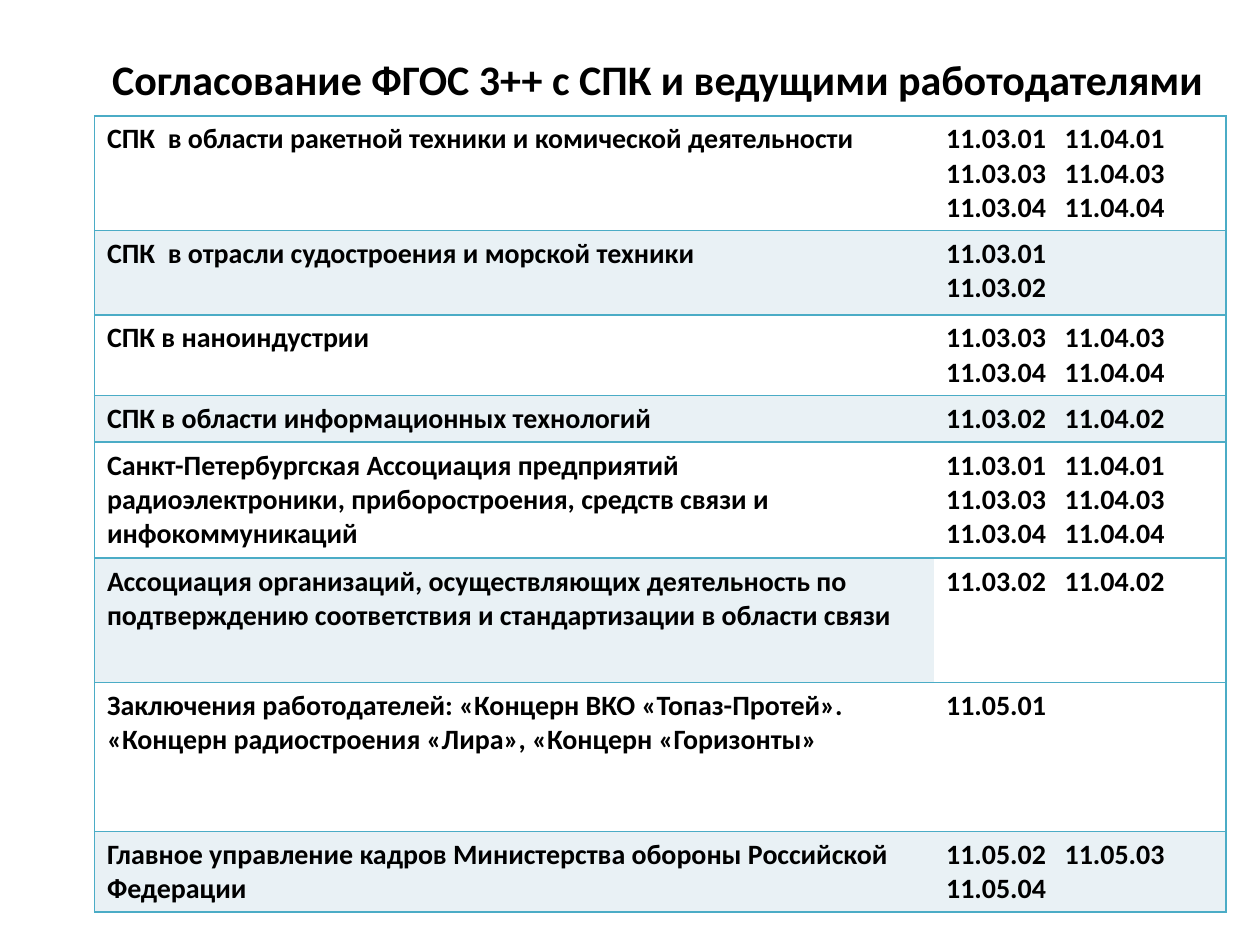
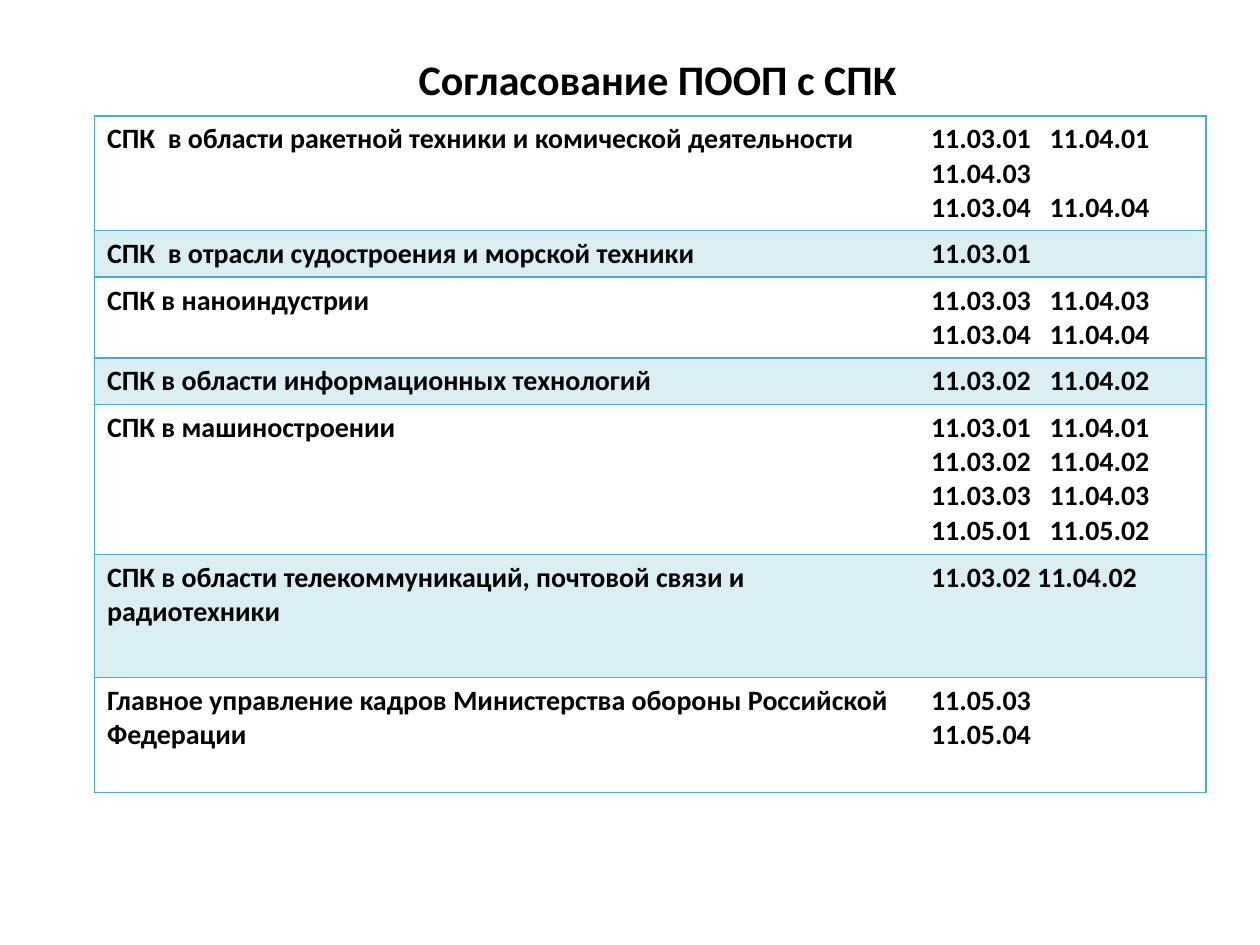
from lxml import etree
from pptx import Presentation
from pptx.dml.color import RGBColor
from pptx.enum.text import MSO_ANCHOR, PP_ALIGN
from pptx.oxml.ns import qn
from pptx.util import Inches, Pt

CENTER = PP_ALIGN.CENTER
MIDDLE = MSO_ANCHOR.MIDDLE

BLACK = RGBColor(0x00, 0x00, 0x00)
WHITE = RGBColor(0xFF, 0xFF, 0xFF)
GREY_BAND = RGBColor(0xE9, 0xF1, 0xF5)
BLUE_BAND = RGBColor(0xDB, 0xEE, 0xF4)
TEAL = RGBColor(0x4B, 0xAC, 0xC6)

FONT = {"name": "Calibri", "bold": True}
TITLE_SIZE, CELL_SIZE = 24, 16
TITLE_BOX = (0.72, 0.35, 9, 0.55)
TABLE_LEFT, TABLE_TOP = 0.75, 0.92
CODE_TAB = 0.94
BORDER_WIDTH = 1

# Each row: height, reviewer, lines of programme codes
ROCKETRY = "СПК  в области ракетной техники и комической деятельности"
SHIPBUILDING = "СПК  в отрасли судостроения и морской техники"
NANO_ROW = (0.64, "СПК в наноиндустрии",
            ["11.03.03\t11.04.03", "11.03.04\t11.04.04"])
IT_ROW = (0.37, "СПК в области информационных технологий",
          ["11.03.02\t11.04.02"])
DEFENCE = "Главное управление кадров Министерства обороны Российской Федерации"
RADIO_CODES = ["11.03.01\t11.04.01", "11.03.03\t11.04.03", "11.03.04\t11.04.04"]

SLIDES = [
    {
        "title": "Согласование ФГОС 3++ с СПК и ведущими работодателями",
        "columns": (6.66, 2.32),
        "band": GREY_BAND,
        "plain_code_rows": {5},
        "rows": [
            (0.91, ROCKETRY, RADIO_CODES),
            (0.67, SHIPBUILDING, ["11.03.01", "11.03.02"]),
            NANO_ROW,
            IT_ROW,
            (0.92, "Санкт-Петербургская Ассоциация предприятий "
                   "радиоэлектроники, приборостроения, средств связи и "
                   "инфокоммуникаций", RADIO_CODES),
            (0.99, "Ассоциация организаций, осуществляющих деятельность по "
                   "подтверждению соответствия и стандартизации в области "
                   "связи", ["11.03.02\t11.04.02"]),
            (1.18, "Заключения работодателей: «Концерн ВКО «Топаз-Протей». "
                   "«Концерн радиостроения «Лира», «Концерн «Горизонты»",
             ["11.05.01"]),
            (0.64, DEFENCE, ["11.05.02\t11.05.03", "11.05.04"]),
        ],
    },
    {
        "title": "Согласование ПООП с СПК",
        "columns": (6.54, 2.28),
        "band": BLUE_BAND,
        "plain_code_rows": set(),
        "rows": [
            (0.91, ROCKETRY,
             ["11.03.01\t11.04.01", "11.04.03", "11.03.04\t11.04.04"]),
            (0.37, SHIPBUILDING, ["11.03.01"]),
            NANO_ROW,
            IT_ROW,
            (1.19, "СПК в машиностроении",
             ["11.03.01\t11.04.01", "11.03.02\t11.04.02",
              "11.03.03\t11.04.03", "11.05.01\t11.05.02"]),
            (0.98, "СПК в области телекоммуникаций, почтовой связи и "
                   "радиотехники", ["11.03.02 11.04.02"]),
            (0.91, DEFENCE, ["11.05.03", "11.05.04"]),
        ],
    },
]


def write(paragraph, text, size):
    run = paragraph.add_run()
    run.text = text
    for attribute, value in FONT.items():
        setattr(run.font, attribute, value)
    run.font.size = Pt(size)
    run.font.color.rgb = BLACK


def set_code_tab(paragraph):
    """Align the second code of a line at a fixed tab stop."""
    tabs = etree.SubElement(paragraph._p.get_or_add_pPr(), qn("a:tabLst"))
    etree.SubElement(tabs, qn("a:tab"), pos=str(Inches(CODE_TAB)), algn="l")


def set_borders(cell, outer_side):
    """Draw the top, bottom and outer side; leave the inner side open."""
    properties = cell._tc.get_or_add_tcPr()
    for side in "LRTB":
        line = etree.SubElement(properties, qn(f"a:ln{side}"),
                                w=str(Pt(BORDER_WIDTH)))
        if side in (outer_side, "T", "B"):
            fill = etree.SubElement(line, qn("a:solidFill"))
            etree.SubElement(fill, qn("a:srgbClr"), val=str(TEAL))
        else:
            etree.SubElement(line, qn("a:noFill"))


def fill_cell(cell, lines, color, outer_side):
    set_borders(cell, outer_side)
    cell.fill.solid()
    cell.fill.fore_color.rgb = color
    frame = cell.text_frame
    for index, line in enumerate(lines):
        paragraph = frame.add_paragraph() if index else frame.paragraphs[0]
        if "\t" in line:
            set_code_tab(paragraph)
        write(paragraph, line, CELL_SIZE)


def add_title(slide, title):
    frame = slide.shapes.add_textbox(*map(Inches, TITLE_BOX)).text_frame
    frame.word_wrap = True
    frame.vertical_anchor = MIDDLE
    frame.paragraphs[0].alignment = CENTER
    write(frame.paragraphs[0], title, TITLE_SIZE)


def add_approvals(slide, content):
    rows, columns = content["rows"], content["columns"]
    height = sum(row[0] for row in rows)
    table = slide.shapes.add_table(
        len(rows), len(columns), Inches(TABLE_LEFT), Inches(TABLE_TOP),
        Inches(sum(columns)), Inches(height)).table
    table.first_row = table.horz_banding = False
    for column, width in zip(table.columns, columns):
        column.width = Inches(width)
    for index, (row_height, reviewer, codes) in enumerate(rows):
        table.rows[index].height = Inches(row_height)
        color = content["band"] if index % 2 else WHITE
        code_color = WHITE if index in content["plain_code_rows"] else color
        fill_cell(table.cell(index, 0), [reviewer], color, "L")
        fill_cell(table.cell(index, 1), codes, code_color, "R")


def main():
    presentation = Presentation()
    presentation.slide_width = Inches(10)
    presentation.slide_height = Inches(7.5)
    blank = presentation.slide_layouts[6]
    for content in SLIDES:
        slide = presentation.slides.add_slide(blank)
        add_title(slide, content["title"])
        add_approvals(slide, content)
    presentation.save("out.pptx")


if __name__ == "__main__":
    main()
